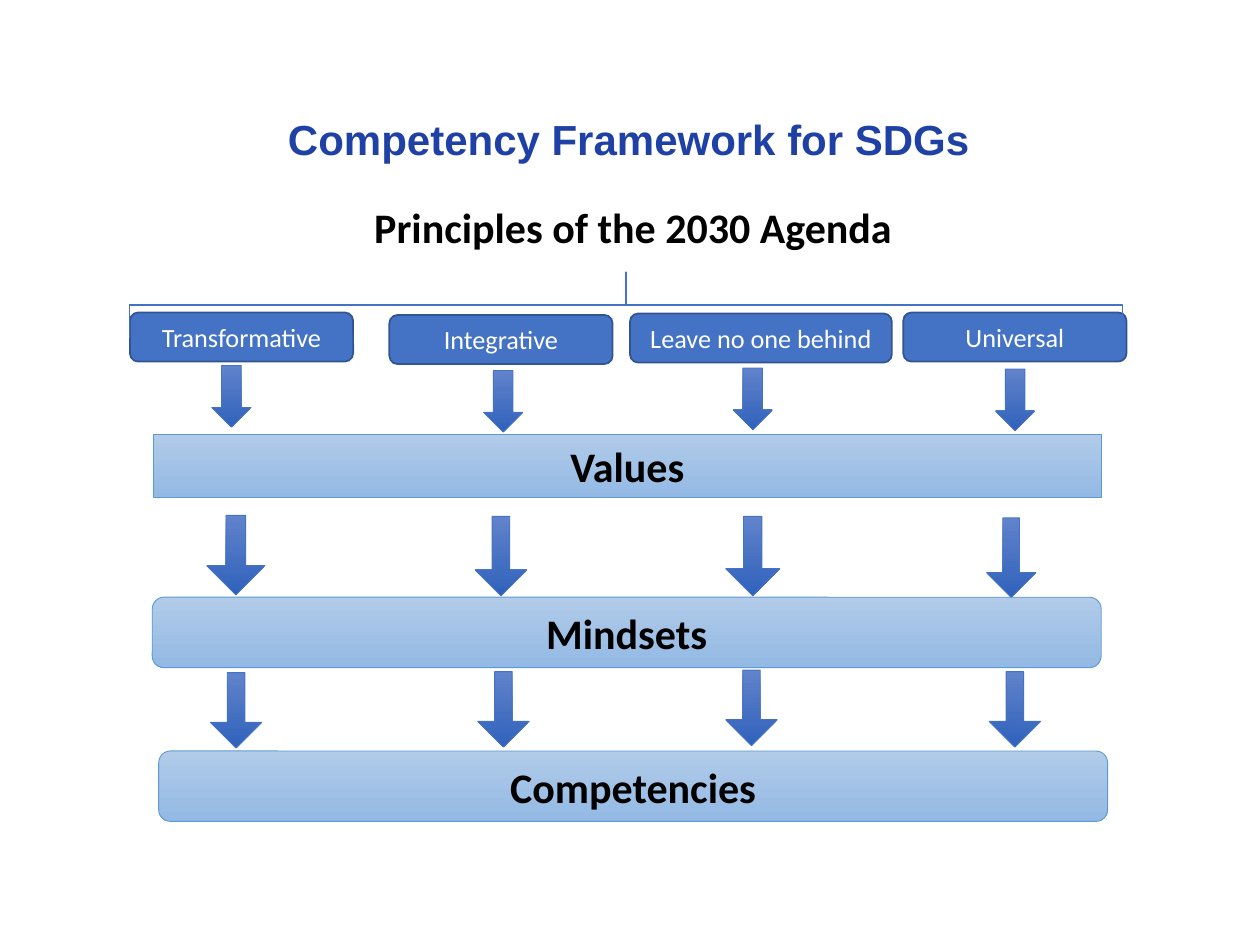
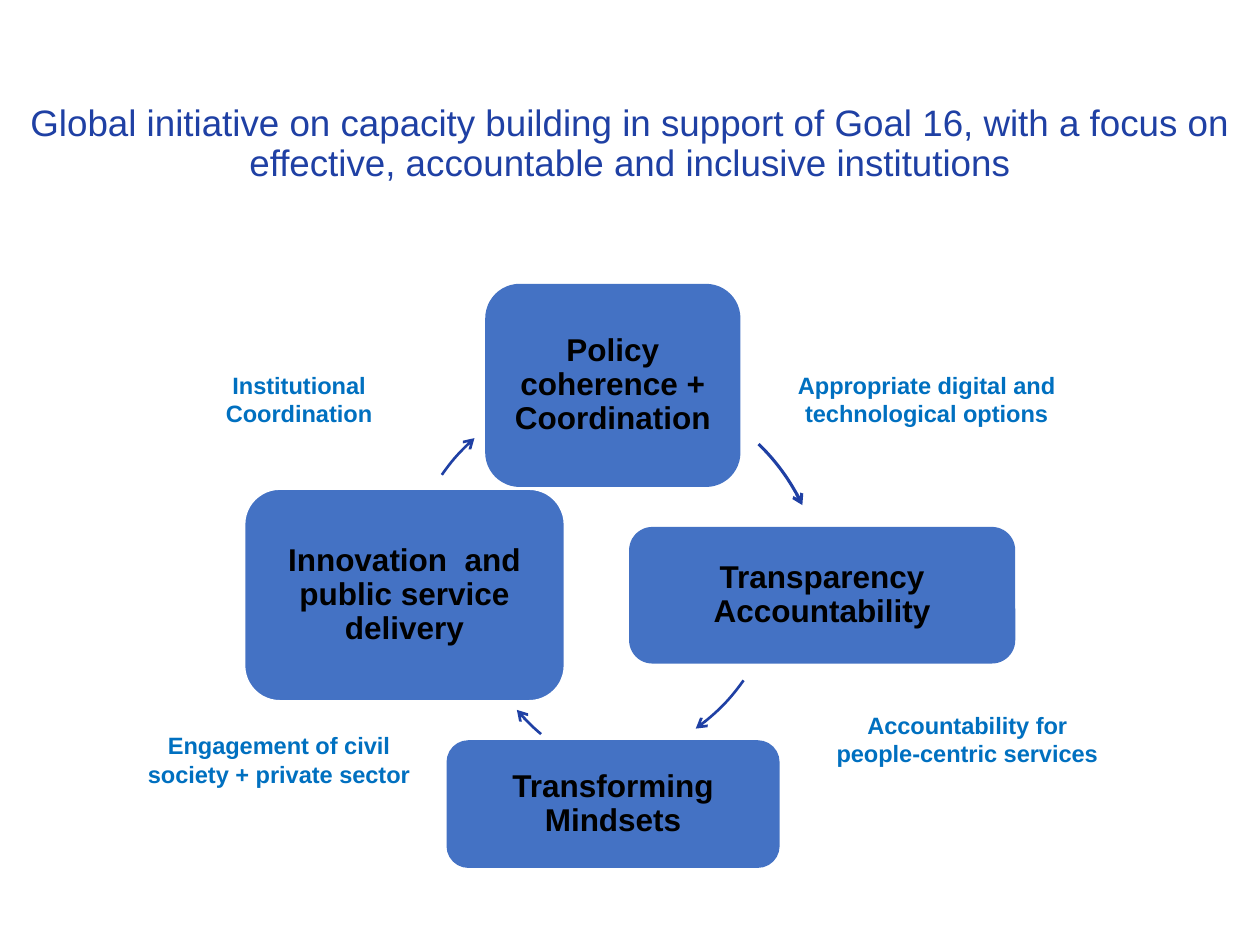
import pptx
import pptx.util
import pptx.dml.color
import pptx.enum.shapes
import pptx.enum.text
import pptx.oxml
import pptx.oxml.ns

Cm = pptx.util.Cm
Pt = pptx.util.Pt
RGB = pptx.dml.color.RGBColor.from_string
MSO = pptx.enum.shapes.MSO_SHAPE
ANCHOR = pptx.enum.text.MSO_ANCHOR

C = {
    "title": "1F40A4", "black": "000000", "white": "FFFFFF", "label": "0070C0",
    "blue": "4472C4", "edge": "325491", "band_edge": "5B9BD5",
    "band_top": "B1CBE9", "band_bottom": "93B9E4",
    "arrow_top": "6183CB", "arrow_bottom": "3062BB",
}
BAND = ("band_top", "band_bottom")
ARROW = ("arrow_top", "arrow_bottom")

STYLES = {
    "title": ("title", 0.9, {"name": "Arial", "size": Pt(24), "bold": True}),
    "long_title": ("title", 0.9, {"name": "Arial", "size": Pt(21), "bold": False}),
    "heading": ("black", 1.0, {"name": "Calibri", "size": Pt(24), "bold": True}),
    "principle": ("white", 1.0, {"name": "Calibri", "size": Pt(15), "bold": False}),
    "theme": ("black", 0.9, {"name": "Arial", "size": Pt(18), "bold": True}),
    "label": ("label", 1.0, {"name": "Arial", "size": Pt(13.5), "bold": True}),
}


def add_text(sp, text, style, anchor=ANCHOR.MIDDLE, inset=0.25):
    color, spacing, font = STYLES[style]
    tf = sp.text_frame
    frame = {"word_wrap": True, "vertical_anchor": anchor,
             "margin_left": Cm(inset), "margin_right": Cm(inset),
             "margin_top": Cm(0.13), "margin_bottom": Cm(0.13)}
    for key, value in frame.items():
        setattr(tf, key, value)
    for i, line in enumerate(text.split("\n")):
        p = tf.add_paragraph() if i else tf.paragraphs[0]
        p.alignment = pptx.enum.text.PP_ALIGN.CENTER
        p.line_spacing = spacing
        r = p.add_run()
        r.text = line
        for key, value in font.items():
            setattr(r.font, key, value)
        r.font.color.rgb = RGB(C[color])


def add_shape(s, kind, at, fill, line, weight):
    sp = s.shapes.add_shape(kind, *[Cm(v) for v in at])
    sp.shadow.inherit = False
    if fill is None:
        sp.fill.background()
    elif isinstance(fill, tuple):
        sp.fill.gradient()
        sp.fill.gradient_angle = 270
        for stop, color in zip(sp.fill.gradient_stops, fill):
            stop.color.rgb = RGB(C[color])
    else:
        sp.fill.solid()
        sp.fill.fore_color.rgb = RGB(C[fill])
    sp.line.color.rgb = RGB(C[line])
    sp.line.width = Pt(weight)
    return sp


prs = pptx.Presentation()
prs.slide_width = Cm(25.4)
prs.slide_height = Cm(19.05)

titles = [
    ("Competency Framework for SDGs", "title", (1.73, 1.88, 21.89, 1.96)),
    ("Global initiative on capacity building in support of Goal 16, with a focus on "
     "effective, accountable and inclusive institutions", "long_title", (0, 1.6, 25.4, 2.64)),
]
slides = []
for text, style, at in titles:
    s = prs.slides.add_slide(prs.slide_layouts[6])
    add_text(s.shapes.add_textbox(*[Cm(v) for v in at]), text, style)
    slides.append(s)
framework, initiative = slides

sp = framework.shapes.add_textbox(Cm(5.59), Cm(3.94), Cm(14.35), Cm(1.27))
add_text(sp, "Principles of the 2030 Agenda", "heading", ANCHOR.TOP)

principles = [
    ("Transformative", 2.62, 6.3, 4.5),
    ("Universal", 18.21, 6.3, 4.5),
    ("Integrative", 7.85, 6.35, 4.5),
    ("Leave no one behind", 12.7, 6.32, 5.28),
]
for text, left, top, width in principles:
    sp = add_shape(framework, MSO.ROUNDED_RECTANGLE, (left, top, width, 0.99), "blue", "edge", 1)
    add_text(sp, text, "principle")

bands = [
    ("Values", MSO.RECTANGLE, (3.1, 8.76, 19.1, 1.27)),
    ("Mindsets", MSO.ROUNDED_RECTANGLE, (3.07, 12.04, 19.13, 1.42)),
    ("Competencies", MSO.ROUNDED_RECTANGLE, (3.2, 15.14, 19.13, 1.42)),
]
for text, kind, at in bands:
    sp = add_shape(framework, kind, at, BAND, "band_edge", 0.5)
    add_text(sp, text, "heading")

brace = add_shape(framework, MSO.LEFT_BRACE, (11.96, -3.86, 1.32, 20.02), None, "blue", 1)
brace.rotation = 90
brace.adjustments[0] = 0

arrow_rows = [
    (1.24, 0.5, [(4.27, 7.37, 0.79), (9.75, 7.47, 0.79), (14.78, 7.42, 0.79), (20.07, 7.44, 0.79)]),
    (1.6, 0.34, [(4.17, 10.39, 1.17), (9.58, 10.41, 1.04), (14.63, 10.41, 1.09), (19.89, 10.44, 0.99)]),
    (1.52, 0.34, [(4.24, 13.56, 1.04), (9.63, 13.54, 1.04), (14.63, 13.51, 1.04), (19.94, 13.54, 1.04)]),
]
for height, shaft, arrows in arrow_rows:
    for left, top, width in arrows:
        sp = add_shape(framework, MSO.DOWN_ARROW, (left, top, width, height), ARROW, "blue", 0.5)
        sp.adjustments[0] = shaft

themes = [
    ("Policy coherence + Coordination", (9.8, 5.74, 5.11, 4.06), "blue"),
    ("Transparency Accountability", (12.7, 10.64, 7.75, 2.72), "blue"),
    ("Transforming Mindsets", (9.02, 14.94, 6.68, 2.54), "blue"),
    ("Innovation  and public service delivery", (4.93, 9.86, 6.45, 4.27), "white"),
]
for text, at, line in themes:
    sp = add_shape(initiative, MSO.ROUNDED_RECTANGLE, at, "blue", line, 1)
    add_text(sp, text, "theme", inset=0.38)

circle = 8.43
arcs = [
    (8.15, 7.77, 314, 334.7, 1.75),
    (7.34, 7.06, 35.4, 54.1, 1.5),
    (9.42, 7.37, 130.3, 139.7, 1.5),
    (8.15, 7.77, 214.9, 228.4, 1.5),
]
for left, top, start, end, weight in arcs:
    sp = add_shape(initiative, MSO.ARC, (left, top, circle, circle), None, "title", weight)
    for i, angle in enumerate((start, end)):
        sp.adjustments[i] = angle * 0.6
    ln = sp.line._get_or_add_ln()
    ln.append(pptx.oxml.parse_xml(
        '<a:tailEnd %s type="arrow"/>' % pptx.oxml.ns.nsdecls("a")))

labels = [
    ("Institutional Coordination", (3.68, 7.34, 4.7, 1.42)),
    ("Engagement of civil\nsociety + private sector", (2.13, 14.61, 6.99, 1.98)),
    ("Appropriate digital and technological options", (15.72, 7.34, 5.92, 1.42)),
    ("Accountability for people-centric services", (16.54, 14.2, 5.92, 1.42)),
]
for text, at in labels:
    sp = initiative.shapes.add_textbox(*[Cm(v) for v in at])
    add_text(sp, text, "label", ANCHOR.TOP)

prs.save("out.pptx")
